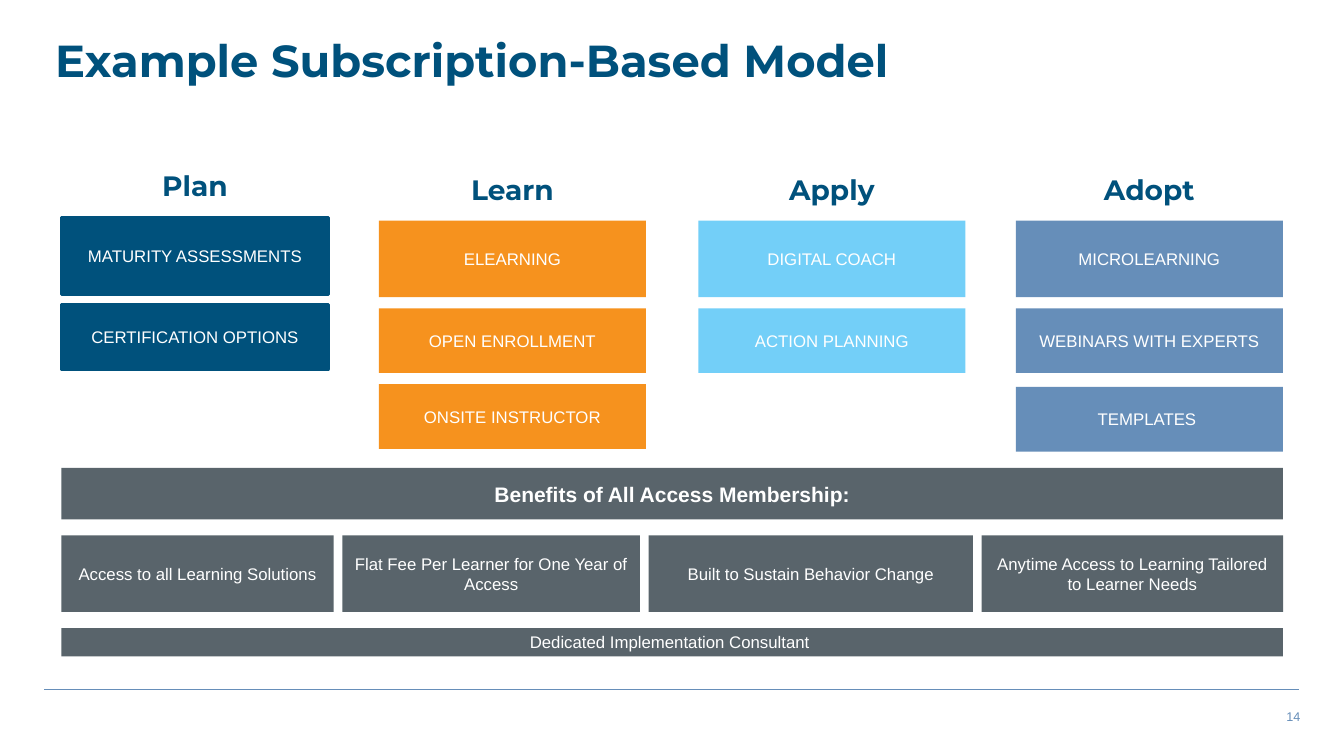
from pptx import Presentation
from pptx.dml.color import RGBColor
from pptx.enum.shapes import MSO_CONNECTOR, MSO_SHAPE
from pptx.enum.text import MSO_ANCHOR, PP_ALIGN
from pptx.oxml.ns import qn
from pptx.util import Cm, Pt
from lxml import etree

RECT = MSO_SHAPE.RECTANGLE
STRAIGHT = MSO_CONNECTOR.STRAIGHT
TOP, MIDDLE = MSO_ANCHOR.TOP, MSO_ANCHOR.MIDDLE
LEFT, CENTER, RIGHT = PP_ALIGN.LEFT, PP_ALIGN.CENTER, PP_ALIGN.RIGHT

NAVY = RGBColor(0x00, 0x51, 0x7C)
ORANGE = RGBColor(0xF6, 0x92, 0x1E)
SKY = RGBColor(0x73, 0xCF, 0xF8)
STEEL = RGBColor(0x66, 0x8E, 0xB9)
GRAY = RGBColor(0x59, 0x64, 0x6B)
WHITE = RGBColor(0xFF, 0xFF, 0xFF)

HEADING = {"name": "Montserrat", "bold": True}
BODY = {"name": "Arial", "bold": False}

COLUMN_WIDTH = 6.73
BOX_HEIGHTS = (1.93, 1.63, 1.63)
# Heading, colour, outline width, left, top, then (offset from top, label) per box
COLUMNS = [
    ("Plan", NAVY, 2.25, 1.55, 3.99,
     [(1.5, "MATURITY ASSESSMENTS"), (3.68, "CERTIFICATION OPTIONS")]),
    ("Learn", ORANGE, 0, 9.55, 4.09,
     [(1.47, "ELEARNING"), (3.68, "OPEN ENROLLMENT"),
      (5.59, "ONSITE INSTRUCTOR")]),
    ("Apply", SKY, 0, 17.6, 4.09,
     [(1.47, "DIGITAL COACH"), (3.68, "ACTION PLANNING")]),
    ("Adopt", STEEL, 0, 25.6, 4.09,
     [(1.47, "MICROLEARNING"), (3.68, "WEBINARS WITH EXPERTS"),
      (5.66, "TEMPLATES ")]),
]
BENEFITS = [
    (6.86, "Access to all Learning Solutions"),
    (7.5, "Flat Fee Per Learner for One Year of Access"),
    (8.17, "Built to Sustain Behavior Change"),
    (7.6, "Anytime Access to Learning Tailored to Learner Needs"),
]
BENEFIT_GAP = 0.22


def write_text(shape, text, font, size, color, align, anchor, inset=0.25):
    tf = shape.text_frame
    frame_format = {
        "word_wrap": True, "vertical_anchor": anchor,
        "margin_left": Cm(0.25), "margin_right": Cm(0.25),
        "margin_top": Cm(inset), "margin_bottom": Cm(inset),
    }
    for key, value in frame_format.items():
        setattr(tf, key, value)
    p = tf.paragraphs[0]
    p.alignment = align
    r = p.add_run()
    r.text = text
    for key, value in {**font, "size": Pt(size)}.items():
        setattr(r.font, key, value)
    r.font.color.rgb = color
    return p


def add_box(s, box, text, fill, outline=0, size=12, bold=False):
    shape = s.shapes.add_shape(RECT, *map(Cm, box))
    shape.shadow.inherit = False
    shape.fill.solid()
    shape.fill.fore_color.rgb = fill
    if outline:
        shape.line.color.rgb = fill
        shape.line.width = Pt(outline)
    else:
        shape.line.fill.background()
    write_text(shape, text, {**BODY, "bold": bold}, size, WHITE, CENTER, MIDDLE)


def add_title(s, box, text):
    title = s.shapes.title
    title.left, title.top, title.width, title.height = map(Cm, box)
    p = write_text(title, text, HEADING, 32, NAVY, LEFT, TOP, 0.13)
    p.line_spacing = 0.9


def add_column(s, left, top, heading, color, outline, items):
    """Place a heading with its stack of boxes below."""
    heading_width = 4.93
    heading_left = left + (COLUMN_WIDTH - heading_width) / 2
    label = s.shapes.add_textbox(
        *map(Cm, (heading_left, top, heading_width, 1.3)))
    write_text(label, heading, HEADING, 20, NAVY, CENTER, TOP)
    for (offset, text), height in zip(items, BOX_HEIGHTS):
        add_box(s, (left, top + offset, COLUMN_WIDTH, height),
                text, color, outline)


def add_benefits(s, left, top, width):
    add_box(s, (left, top, width, 1.3),
            "Benefits of All Access Membership:", GRAY, size=15, bold=True)
    x = left
    for benefit_width, text in BENEFITS:
        add_box(s, (x, top + 1.7, benefit_width, 1.93), text, GRAY)
        x += benefit_width + BENEFIT_GAP
    add_box(s, (left, top + 4.04, width, 0.71),
            "Dedicated Implementation Consultant ", GRAY)


def add_footer(s, left, top, width, number):
    rule = s.shapes.add_connector(
        STRAIGHT, *map(Cm, (left, top, left + width, top)))
    rule.line.color.rgb = STEEL
    rule.line.width = Pt(1)
    etree.SubElement(rule.line._get_or_add_ln().getparent(), qn("a:effectLst"))
    label = s.shapes.add_textbox(
        *map(Cm, (left + width - 13.26, top + 0.36, 13.54, 0.64)))
    write_text(label, number, BODY, 9, STEEL, RIGHT, TOP, 0.13)


def main():
    prs = Presentation()
    prs.slide_width, prs.slide_height = Cm(33.87), Cm(19.05)
    s = prs.slides.add_slide(prs.slide_layouts[5])
    add_footer(s, 1.12, 17.37, 31.62, "14")
    add_title(s, (1.14, 0.84, 21.64, 1.93), "Example Subscription-Based Model")
    for heading, color, outline, left, top, items in COLUMNS:
        add_column(s, left, top, heading, color, outline, items)
    add_benefits(s, 1.55, 11.79, 30.78)
    prs.save("out.pptx")


if __name__ == "__main__":
    main()
